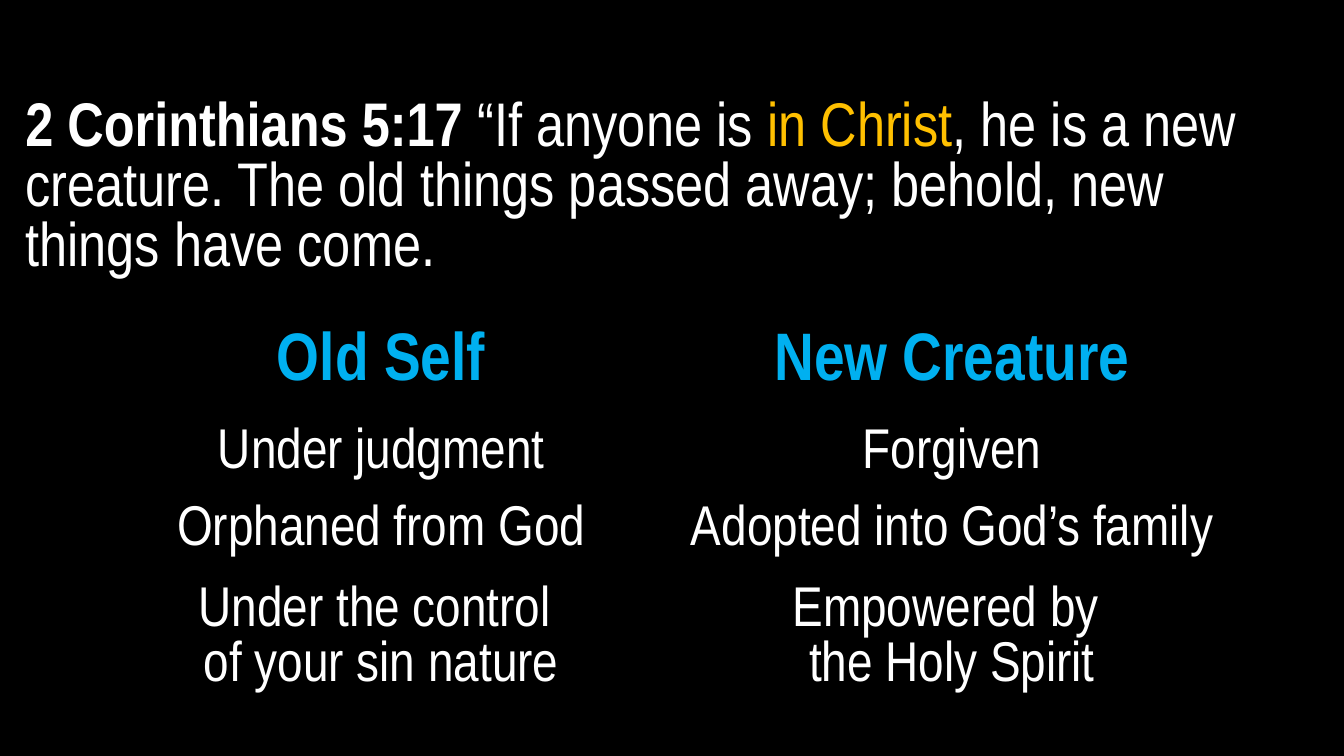
from dataclasses import dataclass

from pptx import Presentation
from pptx.dml.color import RGBColor
from pptx.enum.text import MSO_ANCHOR, MSO_AUTO_SIZE, PP_ALIGN
from pptx.oxml.ns import qn
from pptx.oxml.xmlchemy import OxmlElement
from pptx.slide import Slide
from pptx.table import _Cell as Cell
from pptx.text.text import Font
from pptx.util import Pt

FONT = "Arial Narrow"
BLACK, WHITE, GOLD, BLUE = "000000", "FFFFFF", "FFC000", "00B0F0"
NO_STYLE_NO_GRID = "{2D5ABB26-0587-4C30-8999-92F81FD0307C}"


@dataclass(frozen=True)
class TextStyle:
    size: float
    color: str = WHITE
    bold: bool = False


@dataclass(frozen=True)
class VersePart:
    text: str
    style: TextStyle


@dataclass(frozen=True)
class ContrastRow:
    old_self: str
    new_creature: str
    height: float
    style: TextStyle
    line_spacing: float


VERSE = TextStyle(44)
HEADING = TextStyle(48, BLUE, True)
ENTRY = TextStyle(40)

VERSE_PARTS = [
    VersePart("2 Corinthians 5:17 ", TextStyle(44, WHITE, True)),
    VersePart("“If anyone is ", VERSE),
    VersePart("in Christ", TextStyle(44, GOLD)),
    VersePart(", he is a new creature. The old things passed away; "
              "behold, new things have come.", VERSE),
]

CONTRAST_ROWS = [
    ContrastRow("Old Self", "New Creature", 67, HEADING, 45),
    ContrastRow("Under judgment", "Forgiven", 55.4, ENTRY, 39),
    ContrastRow("Orphaned from God", "Adopted into God’s family", 57.6, ENTRY, 39),
    ContrastRow("Under the control \vof your sin nature",
                "Empowered by \vthe Holy Spirit", 103, ENTRY, 39),
]
COLUMN_WIDTHS = (400.5, 415)


def rgb(color: str) -> RGBColor:
    return RGBColor.from_string(color)


def format_font(font: Font, style: TextStyle) -> None:
    font.name = FONT
    font.size = Pt(style.size)
    font.bold = style.bold
    font.color.rgb = rgb(style.color)


def add_verse(slide: Slide) -> None:
    body = slide.placeholders[1]
    body.left, body.top, body.width, body.height = Pt(8), Pt(11.5), Pt(933), Pt(528.5)
    text_frame = body.text_frame
    text_frame.word_wrap = True
    text_frame.auto_size = MSO_AUTO_SIZE.NONE
    text_frame.vertical_anchor = MSO_ANCHOR.TOP
    text_frame.margin_top = Pt(58.6)

    paragraph = text_frame.paragraphs[0]
    paragraph.alignment = PP_ALIGN.LEFT
    paragraph.line_spacing = Pt(43)
    paragraph.space_before = Pt(0)
    paragraph.space_after = Pt(12)
    for part in VERSE_PARTS:
        run = paragraph.add_run()
        run.text = part.text
        format_font(run.font, part.style)

    # Plain paragraph without a bullet
    properties = paragraph._p.get_or_add_pPr()
    properties.set("marL", str(Pt(2.9)))
    properties.set("indent", "0")
    properties.append(OxmlElement("a:buNone"))


def fill_cell(cell: Cell, text: str, row: ContrastRow) -> None:
    cell.fill.background()
    cell.vertical_anchor = MSO_ANCHOR.TOP
    paragraph = cell.text_frame.paragraphs[0]
    paragraph.text = text
    paragraph.alignment = PP_ALIGN.CENTER
    paragraph.line_spacing = Pt(row.line_spacing)
    for run in paragraph.runs:
        format_font(run.font, row.style)


def add_contrast_table(slide: Slide) -> None:
    frame = slide.shapes.add_table(
        len(CONTRAST_ROWS), len(COLUMN_WIDTHS), Pt(72), Pt(233.3),
        Pt(sum(COLUMN_WIDTHS)), Pt(sum(row.height for row in CONTRAST_ROWS)))
    table = frame.table
    table.first_row = False
    table.horz_banding = False
    for style_id in frame.element.iter(qn("a:tableStyleId")):
        style_id.text = NO_STYLE_NO_GRID

    for column, width in zip(table.columns, COLUMN_WIDTHS):
        column.width = Pt(width)
    for table_row, row in zip(table.rows, CONTRAST_ROWS):
        table_row.height = Pt(row.height)
        for cell, text in zip(table_row.cells, (row.old_self, row.new_creature)):
            fill_cell(cell, text, row)


def main() -> None:
    presentation = Presentation()
    presentation.slide_width, presentation.slide_height = Pt(960), Pt(540)

    # Black slide with a body and no title
    slide = presentation.slides.add_slide(presentation.slide_layouts[1])
    slide.background.fill.solid()
    slide.background.fill.fore_color.rgb = rgb(BLACK)
    title = slide.shapes.title.element
    title.getparent().remove(title)

    # Verse above, contrast below
    add_verse(slide)
    add_contrast_table(slide)
    presentation.save("out.pptx")


if __name__ == "__main__":
    main()
